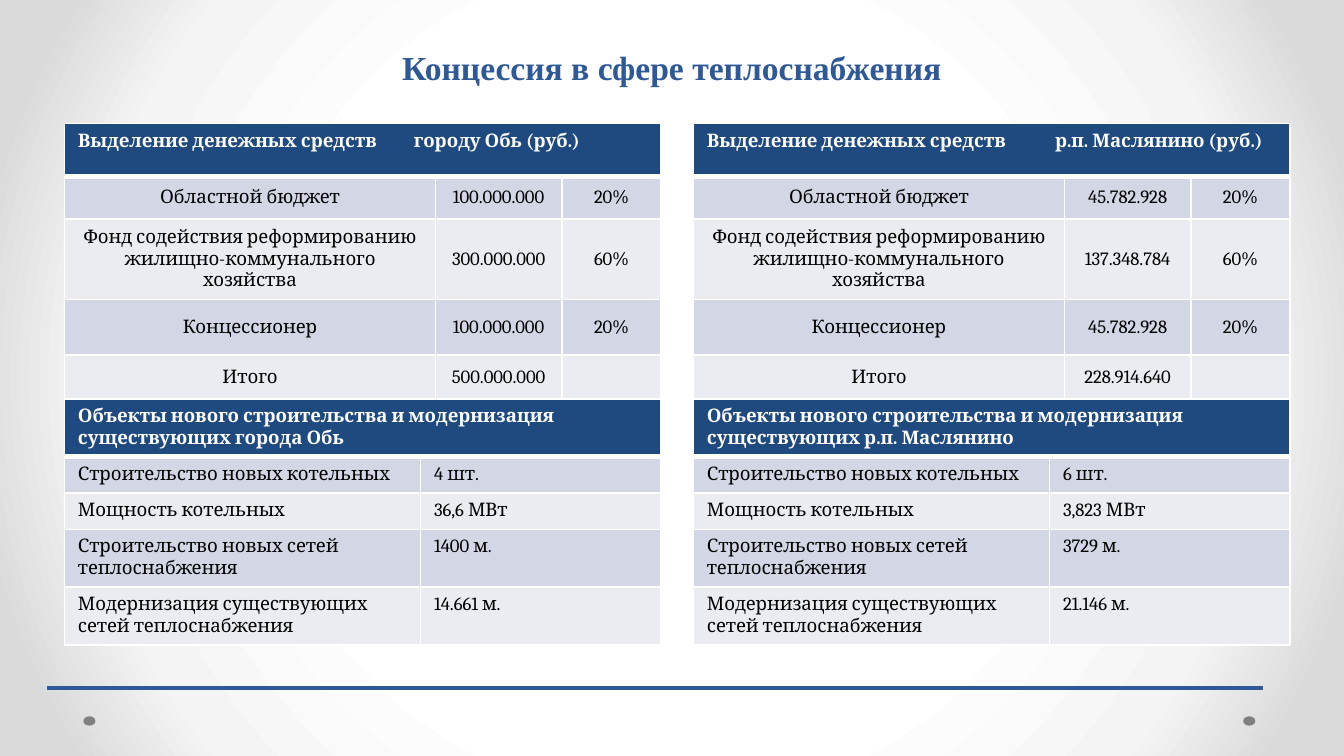
import pptx
import pptx.dml.color
import pptx.enum.shapes
import pptx.enum.text
import pptx.oxml
import pptx.oxml.ns
import pptx.util
from pptx.util import Inches

COLORS = {
    "blue": "2F5897",
    "header": "1F4A7F",
    "band_dark": "D2D6E5",
    "band_light": "EAECF2",
    "white": "FFFFFF",
    "black": "000000",
    "dot": "808080",
    "background_middle": "F4F4F4",
    "background_edge": "DADADA",
}
NAMESPACE = pptx.oxml.ns.nsdecls("a", "p")
ALIGN = pptx.enum.text.PP_ALIGN
ANCHOR = pptx.enum.text.MSO_ANCHOR


def rgb(name):
    return pptx.dml.color.RGBColor.from_string(COLORS[name])


def write_text(frame, text, size=10, font="Cambria", color="black", bold=False,
               align=ALIGN.LEFT, anchor=ANCHOR.TOP, tab=None):
    frame.word_wrap = True
    frame.vertical_anchor = anchor
    paragraph = frame.paragraphs[0]
    paragraph.alignment = align
    if tab:
        paragraph._p.get_or_add_pPr().append(pptx.oxml.parse_xml(
            f'<a:tabLst {NAMESPACE}><a:tab pos="{Inches(tab)}" algn="l"/></a:tabLst>'))
    if not text:
        paragraph._p.get_or_add_endParaRPr().set("sz", str(size * 100))
        return
    run = paragraph.add_run()
    run.text = text
    run.font.size = pptx.util.Pt(size)
    run.font.name = font
    run.font.bold = bold
    run.font.color.rgb = rgb(color)


presentation = pptx.Presentation()
presentation.slide_width = Inches(10)
presentation.slide_height = Inches(10 * 9 / 16)
slide = presentation.slides.add_slide(presentation.slide_layouts[6])

stops = "".join(
    f'<a:gs pos="{position * 1000}"><a:srgbClr val="{COLORS[name]}"/></a:gs>'
    for position, name in [(50, "white"), (76, "background_middle"), (92, "background_edge")])
slide.element.cSld.insert(0, pptx.oxml.parse_xml(
    f'<p:bg {NAMESPACE}><p:bgPr><a:gradFill rotWithShape="1"><a:gsLst>{stops}</a:gsLst>'
    '<a:path path="circle"><a:fillToRect l="50000" t="50000" r="50000" b="50000"/></a:path>'
    '</a:gradFill><a:effectLst/></p:bgPr></p:bg>'))

for left in (9.25, 0.62):
    dot = slide.shapes.add_shape(pptx.enum.shapes.MSO_SHAPE.OVAL,
                                 Inches(left), Inches(5.33), Inches(0.09), Inches(0.07))
    dot.shadow.inherit = False
    dot.fill.solid()
    dot.fill.fore_color.rgb = rgb("dot")
    dot.line.fill.background()

footer_line = slide.shapes.add_connector(pptx.enum.shapes.MSO_CONNECTOR.STRAIGHT,
                                         Inches(0.35), Inches(5.12), Inches(9.4), Inches(5.12))
footer_line.line.color.rgb = rgb("blue")
footer_line.line.width = pptx.util.Pt(1.75)
footer_line._element.spPr.append(pptx.oxml.parse_xml(f"<a:effectLst {NAMESPACE}/>"))

towns = [
    {
        "left": 0.48,
        "funding_title": "Выделение денежных средств\tгороду Обь (руб.)",
        "tab": 2.5,
        "objects_title": "Объекты нового строительства и модернизация существующих города Обь",
        "sums": ["100.000.000", "300.000.000", "100.000.000", "500.000.000"],
        "objects": ["4 шт.", "36,6 МВт", "1400 м.", "14.661 м."],
    },
    {
        "left": 5.16,
        "funding_title": "Выделение денежных средств\tр.п. Маслянино (руб.)",
        "tab": 2.59,
        "objects_title": "Объекты нового строительства и модернизация существующих р.п. Маслянино",
        "sums": ["45.782.928", "137.348.784", "45.782.928", "228.914.640"],
        "objects": ["6 шт.", "3,823 МВт", "3729 м.", "21.146 м."],
    },
]
sources = ["Областной бюджет",
           "Фонд содействия реформированию жилищно-коммунального хозяйства",
           "Концессионер", "Итого"]
shares = ["20%", "60%", "20%", ""]
works = ["Строительство новых котельных", "Мощность котельных",
         "Строительство новых сетей теплоснабжения",
         "Модернизация существующих сетей теплоснабжения"]

tables = []
for town in towns:
    tables.append((town["left"], 0.92, [2.76, 0.94, 0.74], [0.39, 0.32, 0.6, 0.41, 0.34],
                   town["funding_title"], town["tab"],
                   list(zip(sources, town["sums"], shares)),
                   {"align": ALIGN.CENTER, "anchor": ANCHOR.MIDDLE}))
    tables.append((town["left"], 2.97, [2.65, 1.79], [0.43, 0.27, 0.27, 0.43, 0.43],
                   town["objects_title"], None,
                   list(zip(works, town["objects"])), {}))

for left, top, widths, heights, title, tab, body, body_format in tables:
    table = slide.shapes.add_table(len(heights), len(widths), Inches(left), Inches(top),
                                   Inches(sum(widths)), Inches(sum(heights))).table
    table.first_row = False
    table.horz_banding = False
    for column, width in zip(table.columns, widths):
        column.width = Inches(width)
    for row, height in zip(table.rows, heights):
        row.height = Inches(height)
    table.cell(0, 0).merge(table.cell(0, len(widths) - 1))

    for row_index, row in enumerate(table.rows):
        band = "header" if row_index == 0 else ("band_light", "band_dark")[row_index % 2]
        edges = {"lnL": 1, "lnR": 1, "lnT": 3 if row_index == 1 else 1,
                 "lnB": 3 if row_index == 0 else 1}
        for column_index, cell in enumerate(row.cells):
            for edge, width in edges.items():
                cell._tc.get_or_add_tcPr().append(pptx.oxml.parse_xml(
                    f'<a:{edge} {NAMESPACE} w="{pptx.util.Pt(width)}"><a:solidFill>'
                    f'<a:srgbClr val="{COLORS["white"]}"/></a:solidFill></a:{edge}>'))
            cell.fill.solid()
            cell.fill.fore_color.rgb = rgb(band)
            if row_index:
                write_text(cell.text_frame, body[row_index - 1][column_index], **body_format)
                cell.vertical_anchor = body_format.get("anchor", ANCHOR.TOP)
    write_text(table.cell(0, 0).text_frame, title, color="white", bold=True, tab=tab)

title_box = slide.shapes.add_textbox(Inches(0.5), Inches(0.16), Inches(9), Inches(0.54))
write_text(title_box.text_frame, "Концессия в сфере теплоснабжения", size=18,
           font="Times New Roman", color="blue", bold=True,
           align=ALIGN.CENTER, anchor=ANCHOR.BOTTOM)

presentation.save("out.pptx")
